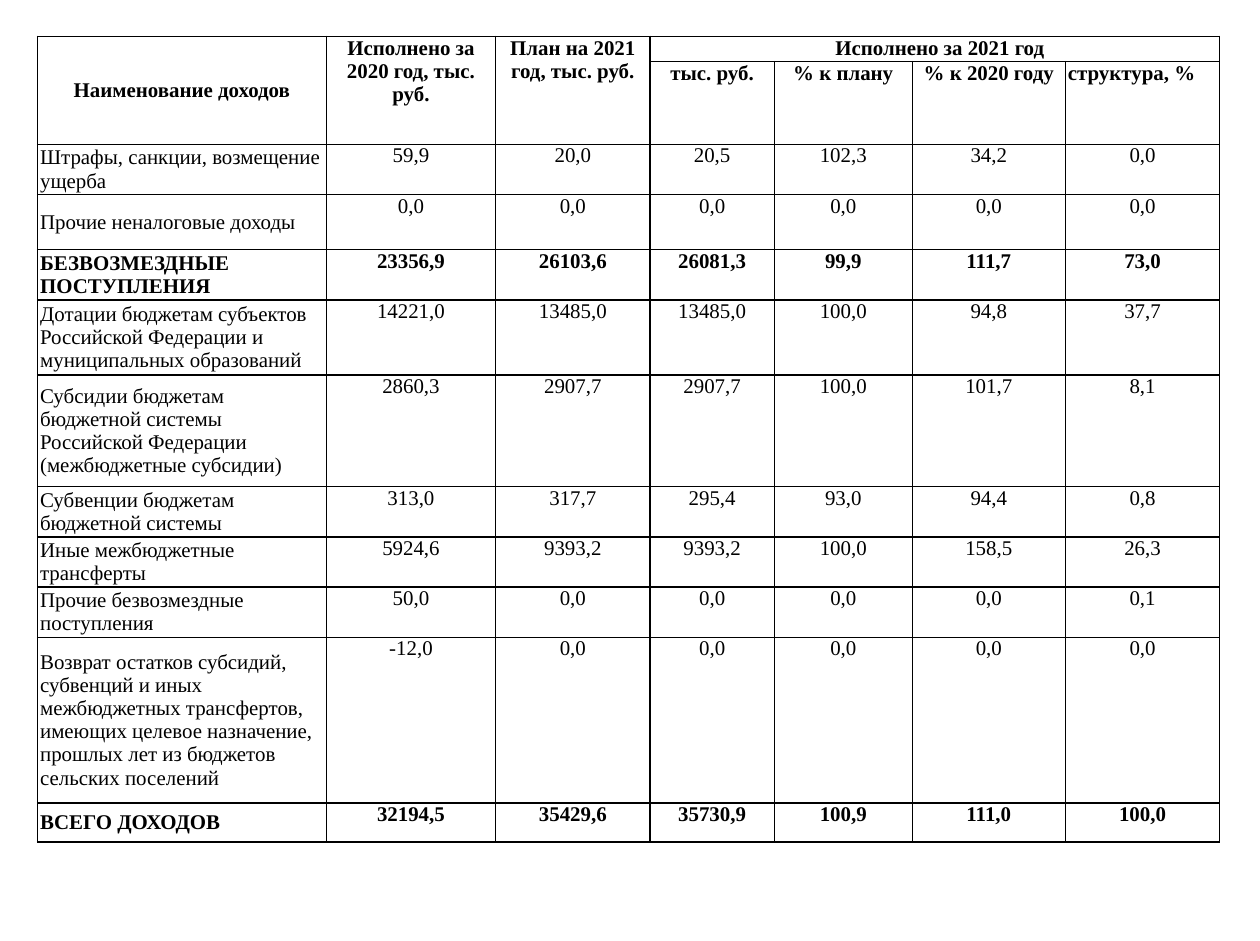
"""Budget income table for 2020 and 2021 on one slide."""
from lxml import etree
from pptx import Presentation
from pptx.dml.color import RGBColor
from pptx.enum import text
from pptx.oxml.ns import qn
from pptx.util import Inches, Pt

BLACK = RGBColor(0, 0, 0)
COLUMNS = [2.3, 1.35, 1.23, 0.99, 1.1, 1.22, 1.23]
HEIGHTS = [0.2, 0.66, 0.4, 0.44, 0.4, 0.6, 0.89, 0.4, 0.4, 0.4, 1.32, 0.31]
ROWS = [
    ["Наименование доходов", "Исполнено за 2020 год, тыс. руб.",
     "План на 2021 год, тыс. руб.", "Исполнено за 2021 год", "", "", ""],
    ["", "", "", "тыс. руб.", "% к плану", "% к 2020 году", "структура, %"],
    ["Штрафы, санкции, возмещение ущерба",
     "59,9", "20,0", "20,5", "102,3", "34,2", "0,0"],
    ["Прочие неналоговые доходы",
     "0,0", "0,0", "0,0", "0,0", "0,0", "0,0"],
    ["БЕЗВОЗМЕЗДНЫЕ ПОСТУПЛЕНИЯ",
     "23356,9", "26103,6", "26081,3", "99,9", "111,7", "73,0"],
    ["Дотации бюджетам субъектов Российской Федерации и муниципальных образований",
     "14221,0", "13485,0", "13485,0", "100,0", "94,8", "37,7"],
    ["Субсидии бюджетам бюджетной системы Российской Федерации (межбюджетные субсидии)",
     "2860,3", "2907,7", "2907,7", "100,0", "101,7", "8,1"],
    ["Субвенции бюджетам бюджетной системы",
     "313,0", "317,7", "295,4", "93,0", "94,4", "0,8"],
    ["Иные межбюджетные трансферты",
     "5924,6", "9393,2", "9393,2", "100,0", "158,5", "26,3"],
    ["Прочие безвозмездные поступления",
     "50,0", "0,0", "0,0", "0,0", "0,0", "0,1"],
    ["Возврат остатков субсидий, субвенций и иных межбюджетных трансфертов, "
     "имеющих целевое назначение, прошлых лет из бюджетов сельских поселений",
     "-12,0", "0,0", "0,0", "0,0", "0,0", "0,0"],
    ["ВСЕГО ДОХОДОВ",
     "32194,5", "35429,6", "35730,9", "100,9", "111,0", "100,0"],
]
BOLD_ROWS = {0, 1, 4, 11}
LEFT_HEADER = (1, 6)


def add_borders(cell):
    tcPr = cell._tc.get_or_add_tcPr()
    for i, side in enumerate(("lnL", "lnR", "lnT", "lnB")):
        ln = etree.Element(qn(f"a:{side}"), w=str(Pt(1)))
        fill = etree.SubElement(ln, qn("a:solidFill"))
        etree.SubElement(fill, qn("a:srgbClr"), val=str(BLACK))
        tcPr.insert(i, ln)


prs = Presentation()
prs.slide_width, prs.slide_height = Inches(10.04), Inches(7.5)
s = prs.slides.add_slide(prs.slide_layouts[6])
table = s.shapes.add_table(
    len(ROWS), len(COLUMNS), Inches(0.3), Inches(0.29),
    Inches(sum(COLUMNS)), Inches(sum(HEIGHTS))).table
table.first_row = table.horz_banding = False
for column, width in zip(table.columns, COLUMNS):
    column.width = Inches(width)
for row, height in zip(table.rows, HEIGHTS):
    row.height = Inches(height)

for i, values in enumerate(ROWS):
    for j, value in enumerate(values):
        cell = table.cell(i, j)
        cell.margin_left = cell.margin_right = Inches(0.02)
        cell.margin_top = cell.margin_bottom = 0
        cell.fill.background()
        add_borders(cell)
        if j == 0:
            cell.vertical_anchor = text.MSO_ANCHOR.MIDDLE
        if not value:
            continue
        p = cell.text_frame.paragraphs[0]
        p.text = value
        left = (i, j) == LEFT_HEADER or (j == 0 and i > 1)
        p.alignment = text.PP_ALIGN.LEFT if left else text.PP_ALIGN.CENTER
        font = p.runs[0].font
        font.name, font.size = "Times New Roman", Pt(12)
        font.bold = i in BOLD_ROWS
        font.color.rgb = BLACK

for j in range(3):
    table.cell(0, j).merge(table.cell(1, j))
year_header = table.cell(0, 3)
year_header.merge(table.cell(0, 6))
pPr = year_header.text_frame.paragraphs[0]._p.get_or_add_pPr()
pPr.set("indent", str(Inches(0.08)))

prs.save("out.pptx")
